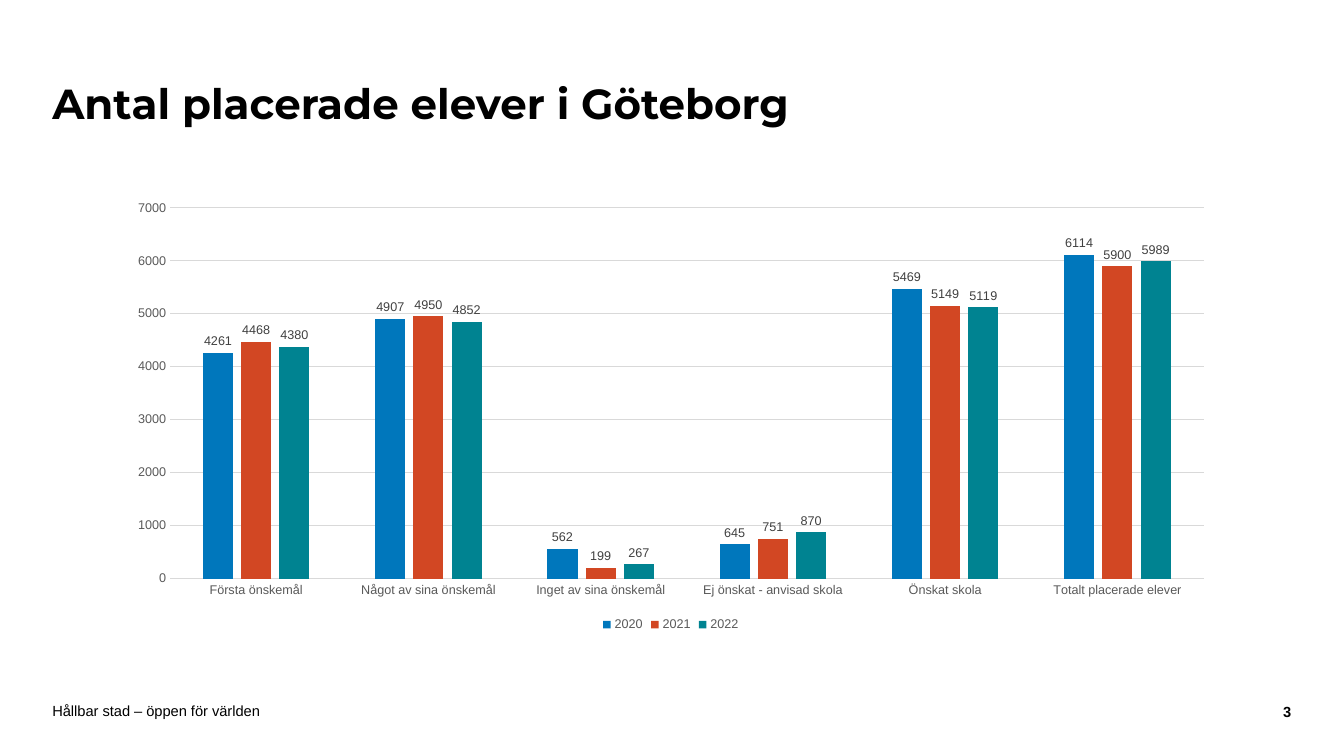
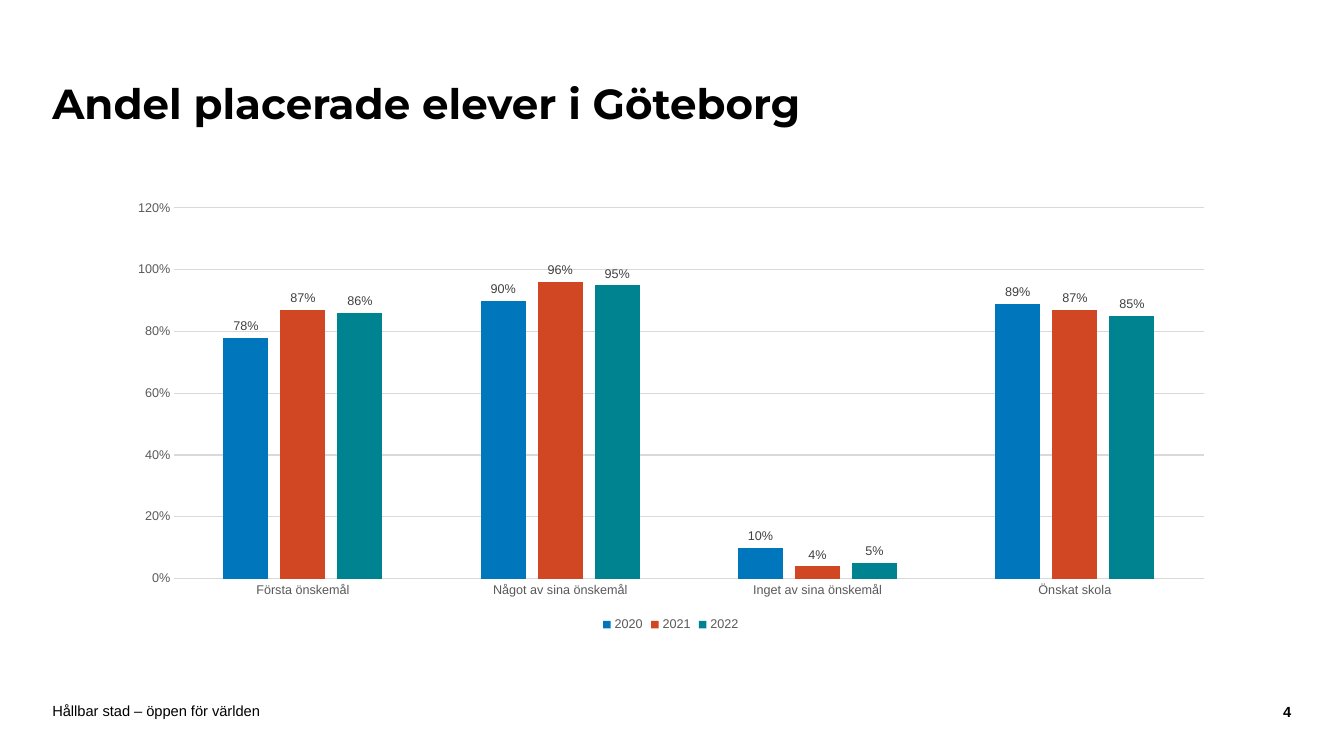
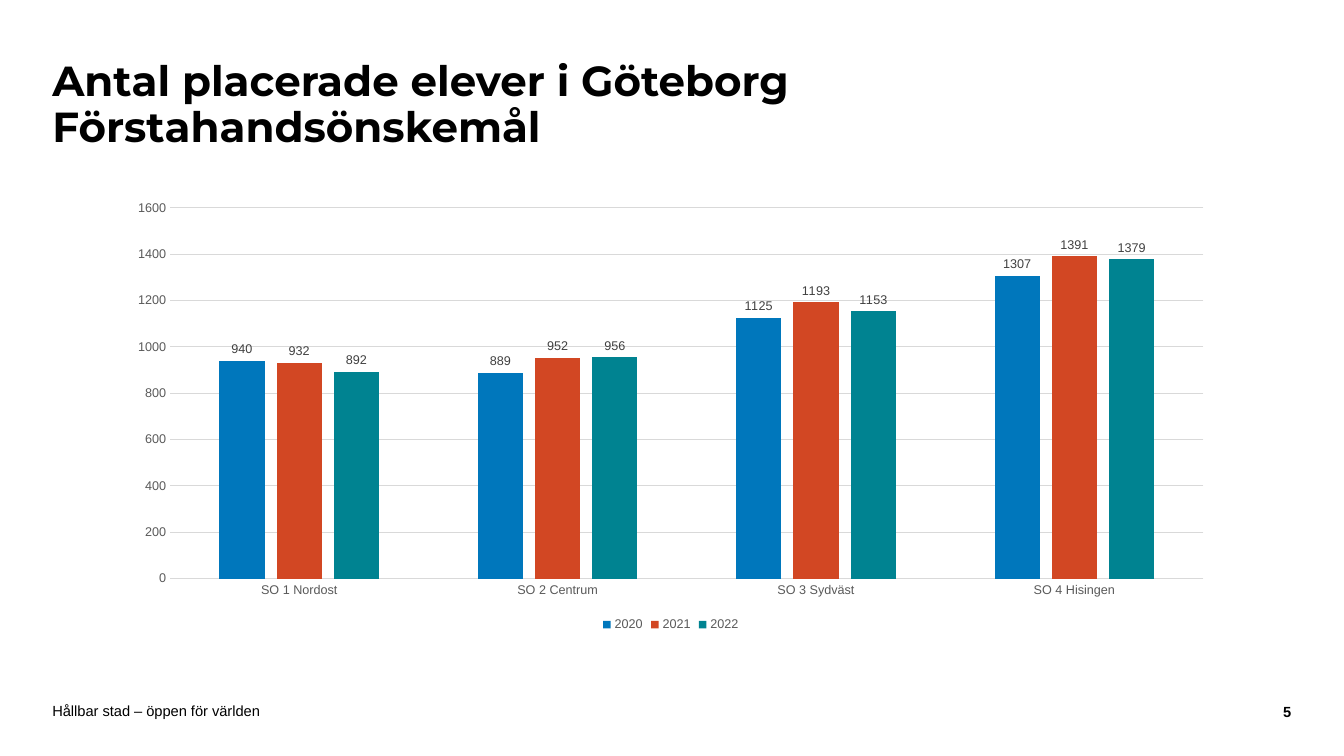
"""Build three column-chart slides on school placements in Göteborg."""

from dataclasses import dataclass

from pptx import Presentation
from pptx.chart.axis import CategoryAxis, ValueAxis
from pptx.chart.data import CategoryChartData
from pptx.dml.color import RGBColor
from pptx.enum.chart import XL_CHART_TYPE, XL_LABEL_POSITION, XL_LEGEND_POSITION, XL_TICK_MARK
from pptx.enum.text import MSO_ANCHOR, PP_ALIGN
from pptx.slide import Slide
from pptx.text.text import Font
from pptx.util import Cm, Length, Pt


@dataclass(frozen=True)
class Theme:
    ink: RGBColor = RGBColor.from_string("000000")
    axis_text: RGBColor = RGBColor.from_string("595959")
    label_text: RGBColor = RGBColor.from_string("404040")
    grid: RGBColor = RGBColor.from_string("D9D9D9")
    years: tuple[RGBColor, ...] = (
        RGBColor.from_string("0077BC"),
        RGBColor.from_string("D24723"),
        RGBColor.from_string("008391"),
    )
    title_face: str = "Montserrat"
    body_face: str = "Arial"
    title_size: Length = Pt(30)
    footer_size: Length = Pt(10.5)
    chart_size: Length = Pt(9)
    grid_width: Length = Pt(0.75)


@dataclass(frozen=True)
class TextSpot:
    left: Length
    top: Length
    width: Length
    height: Length
    size: Length
    face: str
    bold: bool = False
    align: PP_ALIGN = PP_ALIGN.LEFT
    line_spacing: float = 1.0
    inset: Length = Cm(0)


@dataclass(frozen=True)
class ChartSlide:
    title: str
    categories: tuple[str, ...]
    values: dict[str, tuple[float, ...]]
    maximum: float
    step: float
    number_format: str = "General"


THEME = Theme()
FIRST_NUMBER = 3
FOOTER = "Hållbar stad – öppen för världen"
MARGIN = Cm(1.32)
TITLE_SPOT = TextSpot(MARGIN, Cm(1.07), Cm(25.48), Cm(3.2), THEME.title_size,
                      THEME.title_face, bold=True, line_spacing=0.9, inset=Cm(0.13))
FOOTER_SPOT = TextSpot(MARGIN, Cm(17.7), Cm(24), Cm(0.41), THEME.footer_size, THEME.body_face)
NUMBER_SPOT = TextSpot(Cm(30.91), Cm(17.73), Cm(1.63), Cm(0.41), THEME.footer_size,
                       THEME.body_face, bold=True, align=PP_ALIGN.RIGHT)

CHART_SLIDES = (
    ChartSlide(
        "Antal placerade elever i Göteborg",
        ("Första önskemål", "Något av sina önskemål", "Inget av sina önskemål",
         "Ej önskat - anvisad skola", "Önskat skola", "Totalt placerade elever"),
        {"2020": (4261, 4907, 562, 645, 5469, 6114),
         "2021": (4468, 4950, 199, 751, 5149, 5900),
         "2022": (4380, 4852, 267, 870, 5119, 5989)},
        maximum=7000, step=1000,
    ),
    ChartSlide(
        "Andel placerade elever i Göteborg",
        ("Första önskemål", "Något av sina önskemål", "Inget av sina önskemål", "Önskat skola"),
        {"2020": (0.78, 0.9, 0.1, 0.89),
         "2021": (0.87, 0.96, 0.04, 0.87),
         "2022": (0.86, 0.95, 0.05, 0.85)},
        maximum=1.2, step=0.2, number_format="0%",
    ),
    ChartSlide(
        "Antal placerade elever i Göteborg\nFörstahandsönskemål",
        ("SO 1 Nordost", "SO 2 Centrum", "SO 3 Sydväst", "SO 4 Hisingen"),
        {"2020": (940, 889, 1125, 1307),
         "2021": (932, 952, 1193, 1391),
         "2022": (892, 956, 1153, 1379)},
        maximum=1600, step=200,
    ),
)


def style_font(font: Font, face: str, size: Length, color: RGBColor, bold: bool = False) -> None:
    font.name = face
    font.size = size
    font.bold = bold
    font.color.rgb = color


def style_chart_font(font: Font, color: RGBColor) -> None:
    style_font(font, THEME.body_face, THEME.chart_size, color)


def add_text(slide: Slide, spot: TextSpot, text: str) -> None:
    frame = slide.shapes.add_textbox(spot.left, spot.top, spot.width, spot.height).text_frame
    frame.word_wrap = True
    frame.vertical_anchor = MSO_ANCHOR.MIDDLE
    frame.margin_left = frame.margin_right = 0
    frame.margin_top = frame.margin_bottom = spot.inset
    paragraph = frame.paragraphs[0]
    paragraph.text = text
    paragraph.alignment = spot.align
    paragraph.line_spacing = spot.line_spacing
    for run in paragraph.runs:
        style_font(run.font, spot.face, spot.size, THEME.ink, spot.bold)


def style_axis(axis: CategoryAxis | ValueAxis) -> None:
    axis.major_tick_mark = axis.minor_tick_mark = XL_TICK_MARK.NONE
    style_chart_font(axis.tick_labels.font, THEME.axis_text)


def add_column_chart(slide: Slide, content: ChartSlide) -> None:
    data = CategoryChartData(number_format=content.number_format)
    data.categories = content.categories
    for year, values in content.values.items():
        data.add_series(year, values)
    chart = slide.shapes.add_chart(XL_CHART_TYPE.COLUMN_CLUSTERED, Cm(2.92), Cm(4.83),
                                   Cm(27.97), Cm(11.2), data).chart
    chart.has_title = False
    style_chart_font(chart.font, THEME.ink)
    chart.has_legend = True
    chart.legend.position = XL_LEGEND_POSITION.BOTTOM
    chart.legend.include_in_layout = False
    style_chart_font(chart.legend.font, THEME.axis_text)

    style_axis(chart.category_axis)
    baseline = chart.category_axis.format.line
    style_axis(chart.value_axis)
    chart.value_axis.format.line.fill.background()
    chart.value_axis.minimum_scale = 0
    chart.value_axis.maximum_scale = content.maximum
    chart.value_axis.major_unit = content.step
    chart.value_axis.tick_labels.number_format = content.number_format
    chart.value_axis.tick_labels.number_format_is_linked = False
    for line in (baseline, chart.value_axis.major_gridlines.format.line):
        line.color.rgb = THEME.grid
        line.width = THEME.grid_width

    plot = chart.plots[0]
    plot.vary_by_categories = False
    plot.gap_width = 219
    plot.overlap = -27
    for series, color in zip(plot.series, THEME.years):
        series.format.fill.solid()
        series.format.fill.fore_color.rgb = color
        series.invert_if_negative = False
        labels = series.data_labels
        labels.show_value = True
        labels.position = XL_LABEL_POSITION.OUTSIDE_END
        labels.number_format = content.number_format
        labels.number_format_is_linked = False
        style_chart_font(labels.font, THEME.label_text)


def main() -> None:
    deck = Presentation()
    deck.slide_width, deck.slide_height = Cm(33.87), Cm(19.05)
    blank = deck.slide_layouts[6]
    for number, content in enumerate(CHART_SLIDES, start=FIRST_NUMBER):
        slide = deck.slides.add_slide(blank)
        add_text(slide, NUMBER_SPOT, str(number))
        add_text(slide, FOOTER_SPOT, FOOTER)
        add_text(slide, TITLE_SPOT, content.title)
        add_column_chart(slide, content)
    deck.save("out.pptx")


if __name__ == "__main__":
    main()
